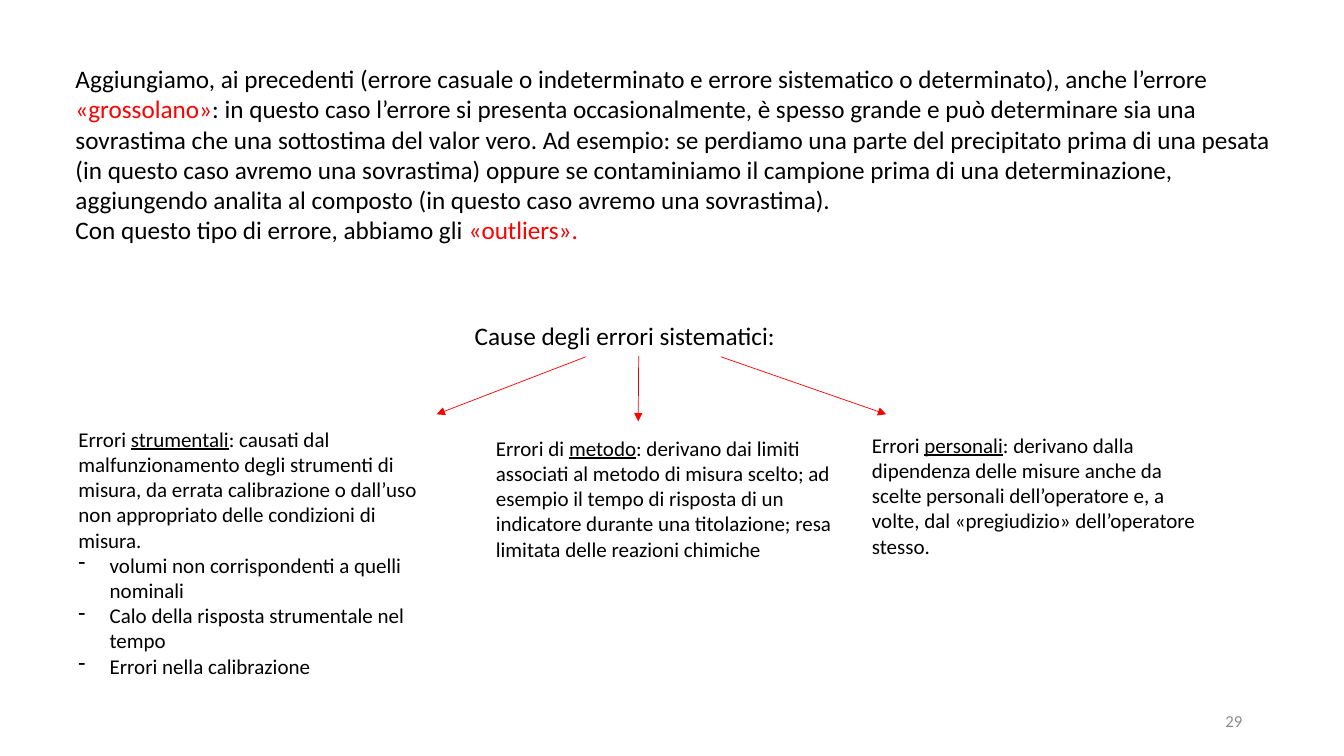
from lxml import etree
from pptx import Presentation
from pptx.dml.color import RGBColor
from pptx.enum import shapes, text
from pptx.oxml import ns
from pptx.util import Inches, Pt

BLACK, RED, GREY = "000000", "FF0000", "8C8C8C"


def rgb(value):
    return RGBColor.from_string(value)


def add_text(left, top, width, height, size, paragraphs, color=BLACK):
    """Add a text box; each paragraph is a list of (text, color, underlined) runs."""
    box = slide.shapes.add_textbox(Inches(left), Inches(top), Inches(width), Inches(height))
    frame = box.text_frame
    frame.word_wrap = True
    for index, runs in enumerate(paragraphs):
        paragraph = frame.add_paragraph() if index else frame.paragraphs[0]
        paragraph.font.size = Pt(size)
        paragraph.font.name = "Calibri"
        paragraph.font.color.rgb = rgb(color)
        for words, run_color, underlined in runs:
            run = paragraph.add_run()
            run.text = words
            run.font.color.rgb = rgb(run_color)
            if underlined:
                run.font.underline = True
    return box


prs = Presentation()
prs.slide_width, prs.slide_height = Inches(13.33), Inches(7.5)
slide = prs.slides.add_slide(prs.slide_layouts[6])

page_number = add_text(9.42, 6.95, 3, 0.4, 12, [[("29", GREY, False)]], GREY)
page_number.text_frame.vertical_anchor = text.MSO_ANCHOR.MIDDLE
page_number.text_frame.paragraphs[0].alignment = text.PP_ALIGN.RIGHT

add_text(0.65, 0.58, 12.25, 1.92, 18, [
    [("Aggiungiamo, ai precedenti (errore casuale o indeterminato e errore sistematico "
      "o determinato), anche l’errore ", BLACK, False),
     ("«grossolano»", RED, False),
     (": in questo caso l’errore si presenta occasionalmente, è spesso grande e può "
      "determinare sia una sovrastima che una sottostima del valor vero. Ad esempio: se "
      "perdiamo una parte del precipitato prima di una pesata (in questo caso avremo una "
      "sovrastima) oppure se contaminiamo il campione prima di una determinazione, "
      "aggiungendo analita al composto (in questo caso avremo una sovrastima).",
      BLACK, False)],
    [("Con questo tipo di errore, abbiamo gli ", BLACK, False),
     ("«outliers».", RED, False)],
])

causes = add_text(4.61, 3.13, 3.45, 0.4, 18,
                  [[("Cause degli errori sistematici:", BLACK, False)]])

# Arrows from the heading to the three causes
arrows = []
for start_x, end_x, end_y in [(5.81, 4.33, 4.11), (6.33, 6.33, 4.18), (7.15, 8.79, 4.11)]:
    arrow = slide.shapes.add_connector(shapes.MSO_CONNECTOR.STRAIGHT, Inches(start_x),
                                       Inches(3.54), Inches(end_x), Inches(end_y))
    arrow.line.color.rgb = rgb(RED)
    arrow.line.width = Pt(0.5)
    etree.SubElement(arrow.line._get_or_add_ln(), ns.qn("a:tailEnd"), type="triangle")
    etree.SubElement(arrow._element.spPr, ns.qn("a:effectLst"))
    arrows.append(arrow)
arrows[1].begin_connect(causes, 2)

# The three causes, each with its key word underlined
error_types = [
    (0.68, 4.18, 2.88, "Errori ", "strumentali",
     ": causati dal malfunzionamento degli strumenti di misura, da errata calibrazione "
     "o dall’uso non appropriato delle condizioni di misura.",
     ["volumi non corrispondenti a quelli nominali",
      "Calo della risposta strumentale nel tempo",
      "Errori nella calibrazione"]),
    (4.82, 4.27, 1.36, "Errori di ", "metodo",
     ": derivano dai limiti associati al metodo di misura scelto; ad esempio il tempo di "
     "risposta di un indicatore durante una titolazione; resa limitata delle reazioni "
     "chimiche", []),
    (8.55, 4.24, 1.36, "Errori ", "personali",
     ": derivano dalla dipendenza delle misure anche da scelte personali dell’operatore "
     "e, a volte, dal «pregiudizio» dell’operatore stesso.", []),
]
for left, top, height, opening, keyword, explanation, examples in error_types:
    definition = [(opening, BLACK, False), (keyword, BLACK, True), (explanation, BLACK, False)]
    error_type = add_text(left, top, 3.6, height, 15,
                          [definition] + [[(example, BLACK, False)] for example in examples])
    for paragraph in error_type.text_frame.paragraphs[1:]:
        properties = paragraph._p.get_or_add_pPr()
        properties.set("marL", str(Inches(0.31)))
        properties.set("indent", str(Inches(-0.31)))
        bullet = etree.Element(ns.qn("a:buChar"), char="-")
        properties.insert(0, bullet)

prs.save("out.pptx")
